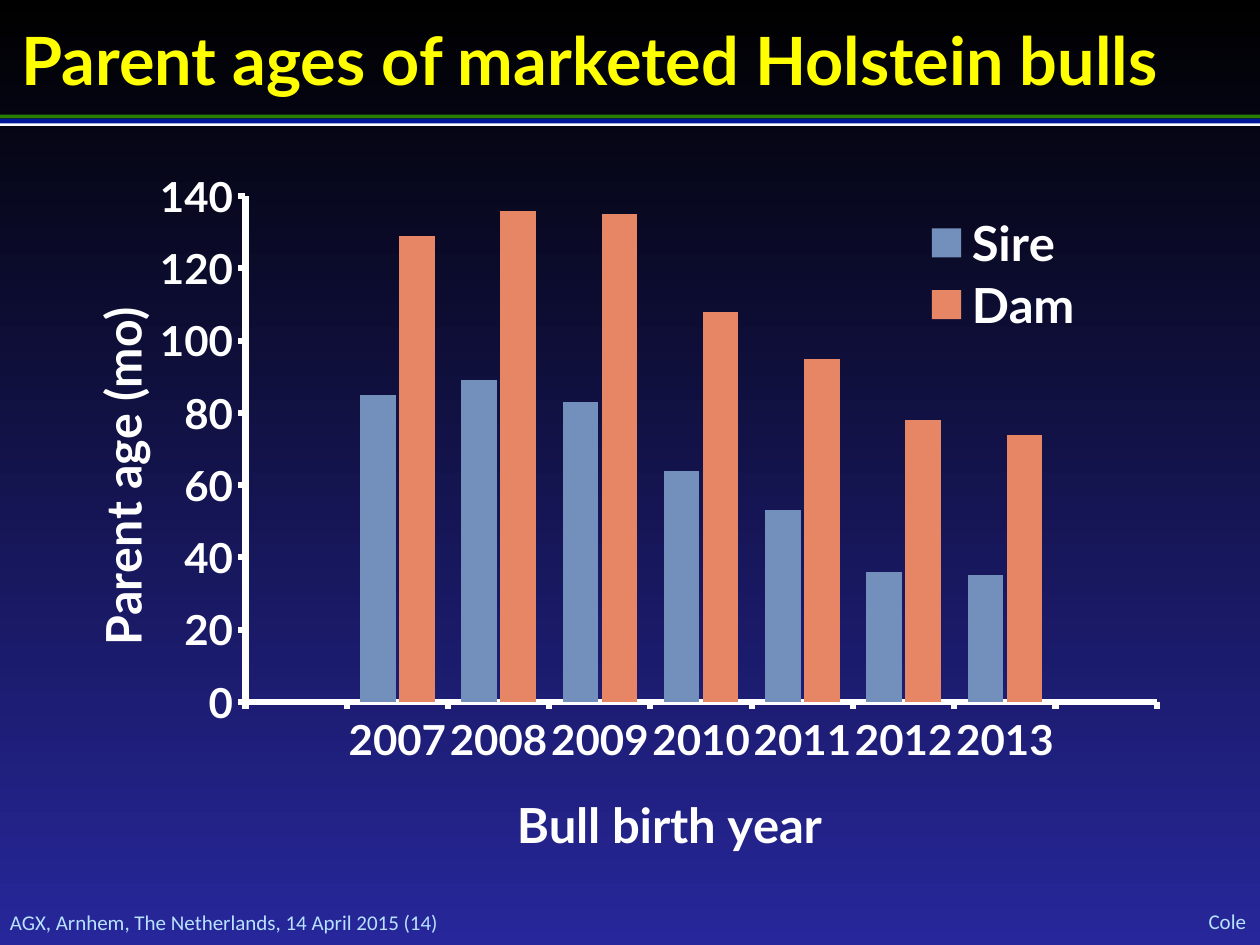
from pptx import Presentation
from pptx.chart.data import CategoryChartData
from pptx.dml.color import RGBColor
from pptx.enum.chart import XL_CHART_TYPE, XL_LEGEND_POSITION, XL_TICK_MARK
from pptx.enum.shapes import MSO_SHAPE
from pptx.enum.text import MSO_ANCHOR, PP_ALIGN
from pptx.oxml import parse_xml
from pptx.oxml.ns import nsdecls, qn
from pptx.util import Cm, Pt

COLORS = {
    "top": "000000", "bottom": "27279B", "title": "FFFF00", "footer": "B8E2FF",
    "green": "2A7E00", "blue": "001799", "white": "FFFFFF",
    "Sire": "738FBC", "Dam": "E78664",
}


def rgb(name):
    return RGBColor.from_string(COLORS[name])


class Deck:
    heading_font = "Lato"
    body_font = "Calibri"

    def __init__(self, prs):
        self.slide = prs.slides.add_slide(prs.slide_layouts[6])

    def background(self, start, end):
        fill = self.slide.background.fill
        fill.gradient()
        fill.gradient_angle = 270
        for stop, name, pos in zip(fill.gradient_stops, (start, end), (0, 1)):
            stop.color.rgb = rgb(name)
            stop.position = pos

    def style(self, font, size, color, name, bold=False):
        font.size, font.name, font.bold = Pt(size), name, bold
        font.color.rgb = rgb(color)

    def text(self, box, text, size, color, name, bold=False,
             align=PP_ALIGN.LEFT, anchor=MSO_ANCHOR.MIDDLE):
        tf = self.slide.shapes.add_textbox(*map(Cm, box)).text_frame
        tf.word_wrap = True
        tf.vertical_anchor = anchor
        tf.margin_left = tf.margin_right = tf.margin_top = tf.margin_bottom = 0
        p = tf.paragraphs[0]
        p.alignment = align
        r = p.add_run()
        r.text = text
        self.style(r.font, size, color, name, bold)

    def band(self, top, height, color):
        sp = self.slide.shapes.add_shape(
            MSO_SHAPE.RECTANGLE, 0, Cm(top), Cm(25.4), Cm(height))
        sp.shadow.inherit = False
        sp.fill.solid()
        sp.fill.fore_color.rgb = rgb(color)
        sp.line.fill.background()

    def layout(self, parent, index, x, y, w=None, h=None, inner=False):
        """Place a chart part by fractions of the chart's size."""
        for old in parent.findall(qn("c:layout")):
            parent.remove(old)
        target = '<c:layoutTarget val="inner"/>' if inner else ""
        modes = '<c:xMode val="edge"/><c:yMode val="edge"/>'
        sizes = "".join(f'<c:{k} val="{v}"/>' for k, v in
                        zip("xywh", (x, y, w, h)) if v is not None)
        parent.insert(index, parse_xml(
            f'<c:layout {nsdecls("c")}><c:manualLayout>{target}{modes}{sizes}'
            '</c:manualLayout></c:layout>'))

    def axis(self, axis, title, x, y):
        axis.has_major_gridlines = False
        axis.major_tick_mark = XL_TICK_MARK.OUTSIDE
        axis.minor_tick_mark = XL_TICK_MARK.NONE
        axis.format.line.color.rgb = rgb("white")
        axis.format.line.width = Pt(3.5)
        self.style(axis.tick_labels.font, 24, "white", self.heading_font, True)
        r = axis.axis_title.text_frame.paragraphs[0].add_run()
        r.text = title
        self.style(r.font, 28, "white", self.heading_font, True)
        self.layout(axis.axis_title._element, 1, x, y)

    def column_chart(self, box, categories, series, x_title, y_title):
        data = CategoryChartData()
        data.categories = categories
        for name, values in series.items():
            data.add_series(name, values)
        chart = self.slide.shapes.add_chart(
            XL_CHART_TYPE.COLUMN_CLUSTERED, *map(Cm, box), data).chart
        chart.has_title = False
        self.style(chart.font, 18, "white", self.body_font)

        # Columns
        plot = chart.plots[0]
        plot.gap_width, plot.overlap, plot.vary_by_categories = 75, -10, False
        for s in plot.series:
            s.format.fill.solid()
            s.format.fill.fore_color.rgb = rgb(s.name)
        self.layout(chart._chartSpace.chart.plotArea, 0,
                    0.17, 0.116, 0.764, 0.678, inner=True)

        # Axes
        self.axis(chart.category_axis, x_title, 0.39, 0.9)
        val = chart.value_axis
        self.axis(val, y_title, 0.03, 0.26)
        val.minimum_scale, val.maximum_scale, val.major_unit = 0, 140, 20
        body = val.axis_title.text_frame._txBody.bodyPr
        body.set("rot", "-5400000")
        body.set("vert", "horz")

        # Legend
        chart.has_legend = True
        legend = chart.legend
        legend.position = XL_LEGEND_POSITION.RIGHT
        legend.include_in_layout = False
        self.style(legend.font, 28, "white", self.heading_font, True)
        self.layout(legend._element, 1, 0.725, 0.135, 0.16, 0.17)


def main():
    prs = Presentation()
    prs.slide_width, prs.slide_height = Cm(25.4), Cm(19.05)
    deck = Deck(prs)
    deck.background("top", "bottom")

    # Footer
    deck.text((0.2, 18.34, 21.59, 0.5),
              "AGX, Arnhem, The Netherlands, 14 April 2015 (14)",
              12, "footer", deck.body_font)
    deck.text((22.28, 18.31, 2.84, 0.53), "Cole", 12, "footer",
              deck.body_font, align=PP_ALIGN.RIGHT)

    # Bands under the title
    for top, height, color in ((2.31, 0.08, "green"), (2.46, 0.08, "white"),
                               (2.39, 0.1, "blue")):
        deck.band(top, height, color)

    # Parent ages, with an empty category at each end
    years = [str(year) for year in range(2007, 2014)]
    ages = {"Sire": [85, 89, 83, 64, 53, 36, 35],
            "Dam": [129, 136, 135, 108, 95, 78, 74]}
    deck.column_chart(
        (0.86, 2.21, 24.05, 15.29), ["", *years, ""],
        {name: [None, *values, None] for name, values in ages.items()},
        "Bull birth year", "Parent age (mo)")

    # Title
    deck.text((0.43, 0.38, 24.56, 1.68), "Parent ages of marketed Holstein bulls",
              38, "title", deck.heading_font, True, anchor=MSO_ANCHOR.TOP)

    prs.save("out.pptx")


if __name__ == "__main__":
    main()
